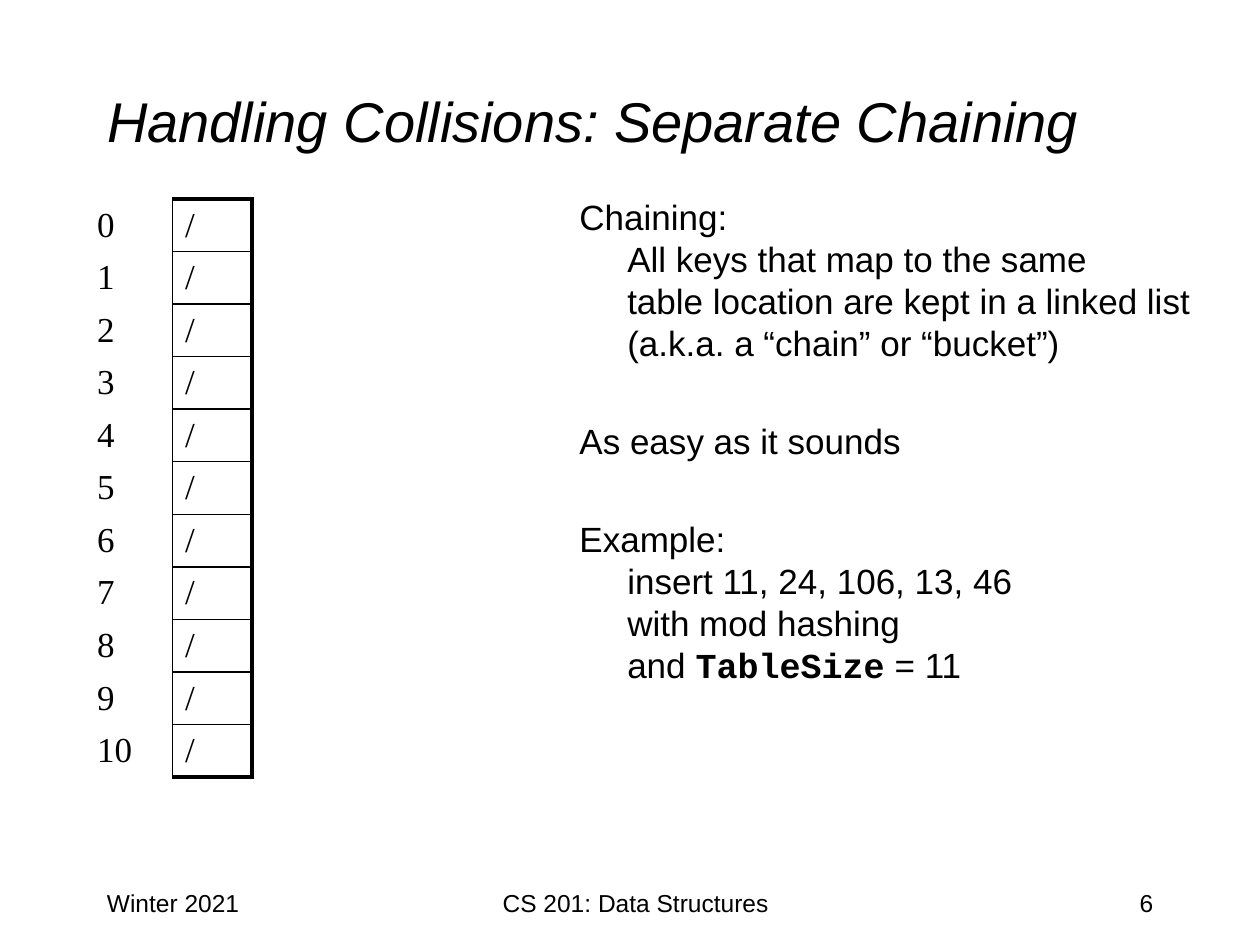
from lxml import etree
from pptx import Presentation
from pptx import util as u
from pptx.dml import color
from pptx.enum import text
from pptx.oxml import ns

COLORS = {"ink": "000000"}
FONTS = {"sans": "Arial", "serif": "Times New Roman", "code": "Courier New"}


class Deck:
    """Hold the style and the current slide, and add each kind of element."""

    def __init__(self, width, height):
        self.prs = Presentation()
        self.prs.slide_width, self.prs.slide_height = u.Inches(width), u.Inches(height)
        self.s = self.prs.slides.add_slide(self.prs.slide_layouts[5])

    def place(self, sp, box):
        for name, value in zip(("left", "top", "width", "height"), box):
            setattr(sp, name, u.Inches(value))

    def run(self, p, words, size, font="sans", **style):
        for i, line in enumerate(words.split("\n")):
            if i:
                p.add_line_break()
            if line:
                r = p.add_run()
                r.text = line
                values = {"name": FONTS[font], "size": u.Pt(size), **style}
                for name, value in values.items():
                    setattr(r.font, name, value)
                r.font.color.rgb = color.RGBColor.from_string(COLORS["ink"])

    def title(self, words, box):
        sp = self.s.shapes.title
        self.place(sp, box)
        sp.text_frame.vertical_anchor = text.MSO_ANCHOR.MIDDLE
        p = sp.text_frame.paragraphs[0]
        p.alignment = text.PP_ALIGN.LEFT
        self.run(p, words, 32, italic=True)

    def textbox(self, box):
        tf = self.s.shapes.add_textbox(*map(u.Inches, box)).text_frame
        tf.word_wrap = True
        return tf

    def label(self, words, box, align):
        p = self.textbox(box).paragraphs[0]
        p.alignment = align
        self.run(p, words, 14)

    def body(self, paragraphs, box, hang=0.38):
        tf = self.textbox(box)
        for i, runs in enumerate(paragraphs):
            p = tf.add_paragraph() if i else tf.paragraphs[0]
            values = {"line_spacing": u.Pt(24), "space_before": u.Pt(32 if i else 0)}
            for name, value in values.items():
                setattr(p, name, value)
            pPr = p._p.get_or_add_pPr()
            pPr.set("marL", str(u.Inches(hang)))
            pPr.set("indent", str(-u.Inches(hang)))
            for words, style in runs:
                self.run(p, words, 20, **style)

    def borders(self, cell, widths):
        tcPr = cell._tc.get_or_add_tcPr()
        for i, side in enumerate("LRTB"):
            ln = etree.Element(ns.qn("a:ln" + side))
            if side in widths:
                ln.set("w", str(u.Pt(widths[side])))
                fill = etree.SubElement(ln, ns.qn("a:solidFill"))
                etree.SubElement(fill, ns.qn("a:srgbClr"), val=COLORS["ink"])
            else:
                etree.SubElement(ln, ns.qn("a:noFill"))
            tcPr.insert(i, ln)

    def table(self, rows, box, widths):
        table = self.s.shapes.add_table(len(rows), len(widths), *map(u.Inches, box)).table
        table.first_row = table.horz_banding = False
        for column, width in zip(table.columns, widths):
            column.width = u.Inches(width)
        last = len(rows) - 1
        for i, row in enumerate(rows):
            table.rows[i].height = u.Inches(box[3] / len(rows))
            slot = {"L": 1, "R": 2.25, "T": 1 if i else 2.25, "B": 2.25 if i == last else 1}
            for j, (words, edges) in enumerate(zip(row, ({"R": 1}, slot))):
                cell = table.cell(i, j)
                cell.fill.background()
                cell.vertical_anchor = text.MSO_ANCHOR.MIDDLE
                cell.margin_top = cell.margin_bottom = u.Inches(0.04)
                self.run(cell.text_frame.paragraphs[0], words, 20, "serif")
                self.borders(cell, edges)


def main():
    deck = Deck(10, 7.5)
    deck.title("Handling Collisions: Separate Chaining", (0.75, 0.33, 8.5, 1.25))
    deck.body(
        [
            [("Chaining:\nAll keys that map to the same\n"
              "table location are kept in a linked list\n"
              "(a.k.a. a “chain” or “bucket”)", {})],
            [("As easy as it sounds", {})],
            [("Example:\ninsert 11, 24, 106, 13, 46\nwith mod hashing\nand ", {}),
             ("TableSize", {"font": "code", "bold": True}),
             (" = 11", {})],
        ],
        (4.5, 1.5, 5.25, 4.92),
    )
    deck.table([(str(i), "/") for i in range(11)], (0.67, 1.58, 1.33, 4.59), (0.7, 0.63))
    align = text.PP_ALIGN
    deck.label("Winter 2021", (0.75, 7, 2.08, 0.5), align.LEFT)
    deck.label("CS 201: Data Structures", (3.17, 7, 3.75, 0.5), align.CENTER)
    deck.label("6", (7.17, 7, 2.08, 0.5), align.RIGHT)
    deck.prs.save("out.pptx")


if __name__ == "__main__":
    main()
